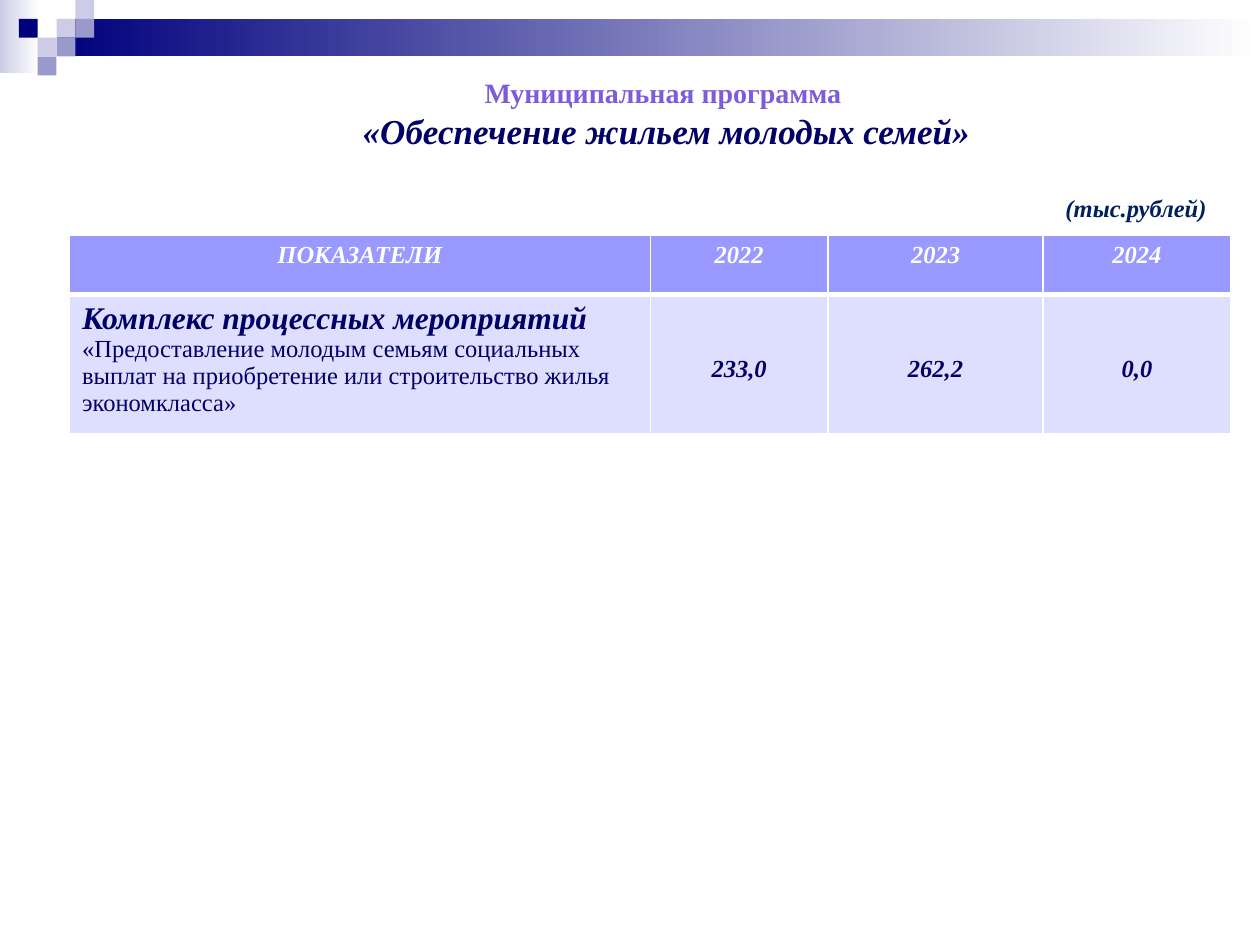
from pptx import Presentation
from pptx.dml.color import RGBColor
from pptx.enum.shapes import MSO_SHAPE as Shape
from pptx.enum.text import MSO_ANCHOR as Anchor, PP_ALIGN as Align
from pptx.oxml import parse_xml
from pptx.oxml.ns import nsdecls
from pptx.util import Cm, Pt

FONT = "Times New Roman"
NAVY, DARK, PALE, MID, WHITE = "00007D", "000066", "CCCCE6", "9999CC", "FFFFFF"
BANDS = [((0, 0, 0.79, 1.47), PALE), ((1.14, 0.38, 24.26, 0.76), NAVY)]
STEP = 0.38
TILES = [(3, 1, PALE), (4, 0, PALE), (4, 1, MID), (2, 2, PALE),
         (1, 1, NAVY), (3, 2, MID), (2, 3, MID)]
TITLE = [("Муниципальная программа ", 16, "7D5CDA", False),
         ("«Обеспечение жильем молодых семей»", 20, DARK, True)]
UNIT = "(тыс.рублей)"
HEAD = ["ПОКАЗАТЕЛИ", "2022", "2023", "2024"]
NAME = "Комплекс процессных мероприятий "
NOTE = ("«Предоставление молодым семьям социальных выплат "
        "на приобретение или строительство жилья экономкласса»")
SUMS = ["233,0", "262,2", "0,0"]
COLS = [11.71, 3.58, 4.34, 3.78]
ROWS = [1.19, 2.79]


def rgb(code):
    """Turn a hex string into a colour."""
    return RGBColor.from_string(code)


def write(par, text, size=14, color=DARK, bold=True, italic=True, align=Align.CENTER):
    """Add a formatted run to a paragraph."""
    par.alignment = align
    run = par.add_run()
    run.text = text
    font = run.font
    font.name, font.size, font.bold, font.italic = FONT, Pt(size), bold, italic
    font.color.rgb = rgb(color)


def block(slide, box, color, fade=False):
    """Draw a plain or fading rectangle."""
    rect = slide.shapes.add_shape(Shape.RECTANGLE, *map(Cm, box))
    rect.shadow.inherit = False
    rect.line.fill.background()
    if fade:
        rect.fill.gradient()
        rect.fill.gradient_angle = 0
        for stop, tone in zip(rect.fill.gradient_stops, (color, WHITE)):
            stop.color.rgb = rgb(tone)
    else:
        rect.fill.solid()
        rect.fill.fore_color.rgb = rgb(color)


def label(slide, box, wrap):
    """Add a text box and return its frame."""
    frame = slide.shapes.add_textbox(*map(Cm, box)).text_frame
    frame.word_wrap = wrap
    return frame


def dress(cell, color, base):
    """Give a cell its borders and fill."""
    props = cell._tc.get_or_add_tcPr()
    for side, width in zip("LRTB", (1, 1, 1, base)):
        props.append(parse_xml(
            f'<a:ln{side} {nsdecls("a")} w="{Pt(width)}"><a:solidFill>'
            f'<a:srgbClr val="{WHITE}"/></a:solidFill></a:ln{side}>'))
    cell.fill.solid()
    cell.fill.fore_color.rgb = rgb(color)


def grid(slide):
    """Build the table of figures."""
    box = map(Cm, (1.4, 4.75, sum(COLS), sum(ROWS)))
    table = slide.shapes.add_table(len(ROWS), len(COLS), *box).table
    for col, width in zip(table.columns, COLS):
        col.width = Cm(width)
    for row, height in zip(table.rows, ROWS):
        row.height = Cm(height)
    for col, text in enumerate(HEAD):
        cell = table.cell(0, col)
        dress(cell, "9999FF", 3)
        write(cell.text_frame.paragraphs[0], text, color=WHITE)
    for col, text in enumerate([NAME] + SUMS):
        cell = table.cell(1, col)
        dress(cell, "DEDEFF", 1)
        par = cell.text_frame.paragraphs[0]
        if col:
            cell.vertical_anchor = Anchor.MIDDLE
            cell.margin_top = Cm(0.33)
            write(par, text)
        else:
            write(par, text, size=18, align=Align.LEFT)
            write(par, NOTE, bold=False, italic=False, align=Align.LEFT)


def main():
    """Build and save the slide."""
    deck = Presentation()
    deck.slide_width, deck.slide_height = Cm(25.4), Cm(19.05)
    slide = deck.slides.add_slide(deck.slide_layouts[6])
    for box, color in BANDS:
        block(slide, box, color, fade=True)
    for col, row, color in TILES:
        block(slide, (col * STEP, row * STEP, STEP, STEP), color)
    frame = label(slide, (3.96, 1.4, 18.95, 1.8), True)
    for num, (text, size, color, slant) in enumerate(TITLE):
        par = frame.add_paragraph() if num else frame.paragraphs[0]
        write(par, text, size=size, color=color, italic=slant)
    grid(slide)
    unit = label(slide, (21.23, 3.76, 3.38, 0.86), False)
    write(unit.paragraphs[0], UNIT, color="002060", align=Align.LEFT)
    deck.save("out.pptx")


if __name__ == "__main__":
    main()
